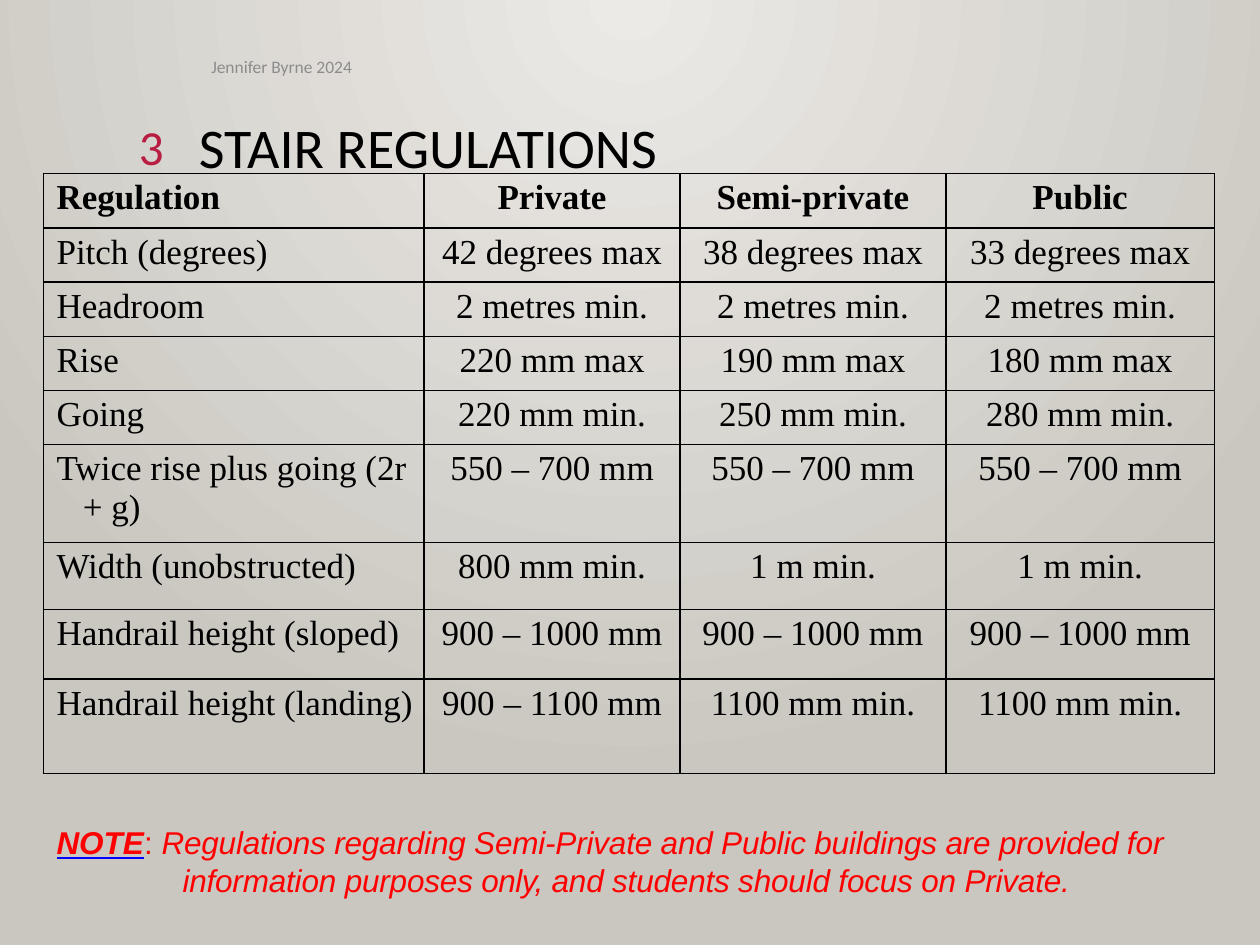
from dataclasses import dataclass

from lxml.etree import SubElement
from pptx import Presentation
from pptx.dml.color import RGBColor as Rgb
from pptx.enum.text import MSO_ANCHOR as Anchor, PP_ALIGN as Align
from pptx.oxml import parse_xml
from pptx.oxml.ns import nsdecls, qn
from pptx.util import Cm, Pt


@dataclass(frozen=True)
class Theme:
    ink: str = "000000"
    accent: str = "B71E42"
    muted: str = "8C8C8C"
    alert: str = "FF0000"
    underline: str = "0000FF"
    glow: str = "ECEAE7"
    ground: str = "CAC7C1"
    heading_font: str = "Calibri"
    table_font: str = "Times New Roman"
    note_font: str = "Arial"
    title_size: int = 32
    number_size: int = 28
    table_size: int = 20
    note_size: int = 18
    credit_size: int = 10


THEME = Theme()

COLUMN_WIDTHS = (7.67, 5.16, 5.36, 5.41)
ROW_HEIGHTS = (1.09,) * 5 + (1.96, 1.35, 1.4, 1.9)
REGULATIONS = (
    ("Regulation", "Private", "Semi-private", "Public"),
    ("Pitch (degrees)", "42 degrees max", "38 degrees max", "33 degrees max"),
    ("Headroom",) + ("2 metres min.",) * 3,
    ("Rise", "220 mm max", "190 mm max", "180 mm max"),
    ("Going", "220 mm min.", "250 mm min.", "280 mm min."),
    ("Twice rise plus going (2r + g)",) + ("550 – 700 mm",) * 3,
    ("Width (unobstructed)", "800 mm min.", "1 m min.", "1 m min."),
    ("Handrail height (sloped)",) + ("900 – 1000 mm",) * 3,
    ("Handrail height (landing)", "900 – 1100 mm", "1100 mm min.", "1100 mm min."),
)


def add_span(para, text, font, size, color, bold=False, italic=False, spacing=0):
    span = para.add_run()
    span.text = text
    span.font.name = font
    span.font.size = Pt(size)
    span.font.bold = bold
    span.font.italic = italic
    span.font.color.rgb = Rgb.from_string(color)
    if spacing:
        span.font._element.set("spc", str(spacing))
    return span


def set_indent(para, left, first=0):
    properties = para._p.get_or_add_pPr()
    properties.set("marL", str(Cm(left)))
    properties.set("indent", str(Cm(first)))


def add_text_box(page, box, insets=(0.25, 0.13, 0.25, 0.13), anchor=Anchor.TOP):
    frame = page.shapes.add_textbox(*map(Cm, box)).text_frame
    frame.word_wrap = True
    frame.vertical_anchor = anchor
    (frame.margin_left, frame.margin_top,
     frame.margin_right, frame.margin_bottom) = map(Cm, insets)
    return frame.paragraphs[0]


def paint_background(page):
    fill = page.background.fill
    fill.gradient()
    for stop, color, position in zip(fill.gradient_stops, (THEME.glow, THEME.ground), (0, 1)):
        stop.color.rgb = Rgb.from_string(color)
        stop.position = position
    linear = next(page._element.iter(qn("a:lin")))
    linear.getparent().replace(linear, parse_xml(
        f'<a:path {nsdecls("a")} path="circle">'
        '<a:fillToRect l="43000" t="0" r="43000" b="100000"/></a:path>'))


def add_header(page, box):
    left, top, width, height = box
    credit = add_text_box(page, (left + 2.67, top, 11.2, 0.86), anchor=Anchor.MIDDLE)
    add_span(credit, "Jennifer Byrne 2024", THEME.heading_font, THEME.credit_size, THEME.muted)
    number = add_text_box(page, (left, top + 1.3, 2.21, 1.4))
    number.alignment = Align.RIGHT
    add_span(number, "3", THEME.heading_font, THEME.number_size, THEME.accent)
    title = add_text_box(page, (left + 2.67, top + 1.32, width - 2.67, height - 1.32),
                         (0, 0.03, 0, 0))
    add_span(title, "STAIR REGULATIONS", THEME.heading_font, THEME.title_size, THEME.ink)


def add_borders(cell):
    properties = cell._tc.get_or_add_tcPr()
    for index, side in enumerate(("lnL", "lnR", "lnT", "lnB")):
        properties.insert(index, parse_xml(
            f'<a:{side} {nsdecls("a")} w="{Pt(1)}"><a:solidFill>'
            f'<a:srgbClr val="{THEME.ink}"/></a:solidFill></a:{side}>'))


def fill_cell(cell, text, is_header, is_label):
    cell.margin_left = cell.margin_right = cell.margin_bottom = 0
    cell.margin_top = Cm(0.1)
    cell.fill.background()
    add_borders(cell)
    para = cell.text_frame.paragraphs[0]
    if is_label:
        set_indent(para, 0.79, -0.53)
    else:
        para.alignment = Align.CENTER
    add_span(para, text, THEME.table_font, THEME.table_size, THEME.ink, bold=is_header)


def add_regulation_table(page, box):
    table = page.shapes.add_table(
        len(REGULATIONS), len(COLUMN_WIDTHS), *map(Cm, box)).table
    table.first_row = table.horz_banding = False
    for column, width in zip(table.columns, COLUMN_WIDTHS):
        column.width = Cm(box[2] * width / sum(COLUMN_WIDTHS))
    for row, height in zip(table.rows, ROW_HEIGHTS):
        row.height = Cm(box[3] * height / sum(ROW_HEIGHTS))
    for row_index, entries in enumerate(REGULATIONS):
        for column_index, text in enumerate(entries):
            fill_cell(table.cell(row_index, column_index), text,
                      row_index == 0, column_index == 0)


def add_note(page, box):
    para = add_text_box(page, box, (0, 0.03, 0, 0))
    set_indent(para, 2.56, -2.54)
    style = (THEME.note_font, THEME.note_size, THEME.alert)
    label = add_span(para, "NOTE", *style, bold=True, italic=True)
    label.font.underline = True
    underline = parse_xml(f'<a:uFill {nsdecls("a")}/>')
    solid = SubElement(underline, qn("a:solidFill"))
    SubElement(solid, qn("a:srgbClr")).set("val", THEME.underline)
    label.font._element.find(qn("a:latin")).addprevious(underline)
    add_span(para, ": ", *style)
    for text, spacing in (
        ("Regulations regarding Semi-Private and Public buildings are provided ", -10),
        ("for ", 0),
        ("information purposes ", -10),
        ("only, ", -30),
        ("and students should focus on Private.", -10),
    ):
        add_span(para, text, *style, italic=True, spacing=spacing)


def main():
    deck = Presentation()
    deck.slide_width, deck.slide_height = Cm(25.4), Cm(19.05)
    page = deck.slides.add_slide(deck.slide_layouts[6])
    paint_background(page)
    add_header(page, (1.34, 0.91, 20.93, 4.24))
    add_regulation_table(page, (0.88, 3.5, 23.6, 12.1))
    add_note(page, (1.12, 16.56, 22.83, 1.6))
    deck.save("out.pptx")


if __name__ == "__main__":
    main()
